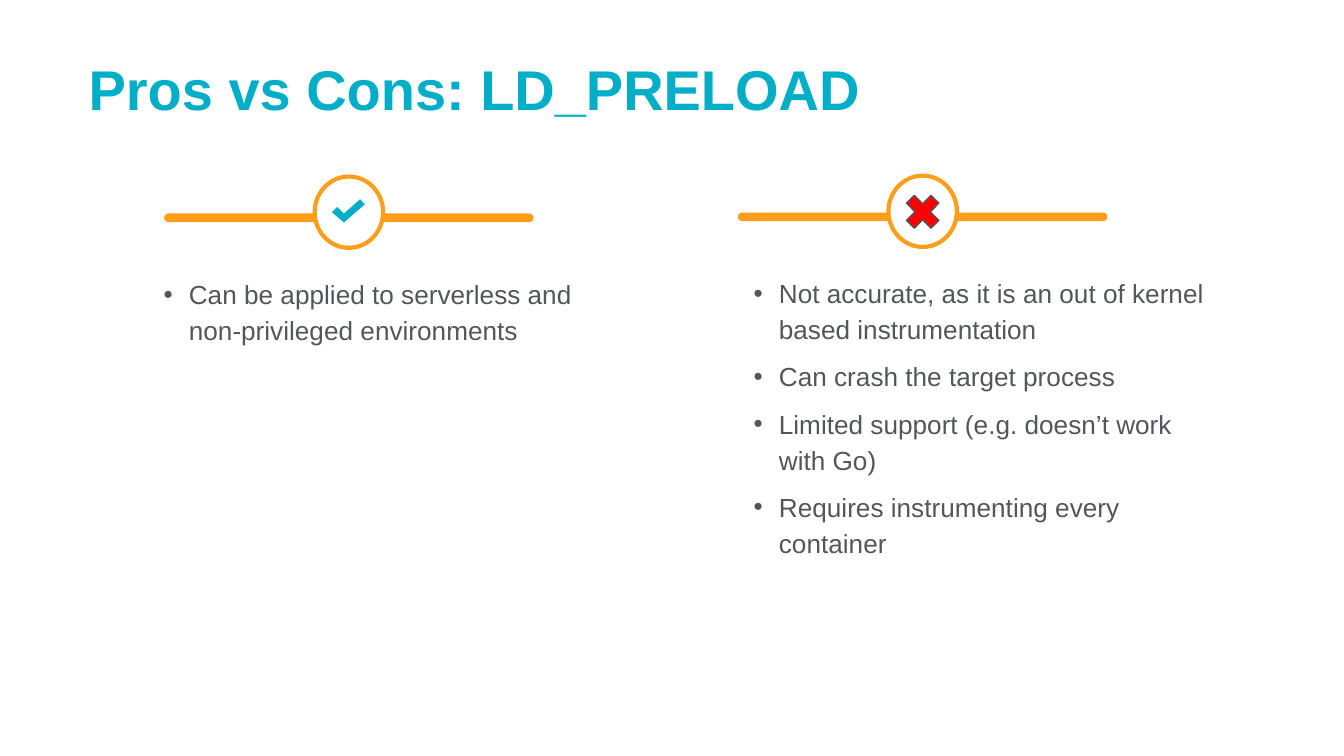
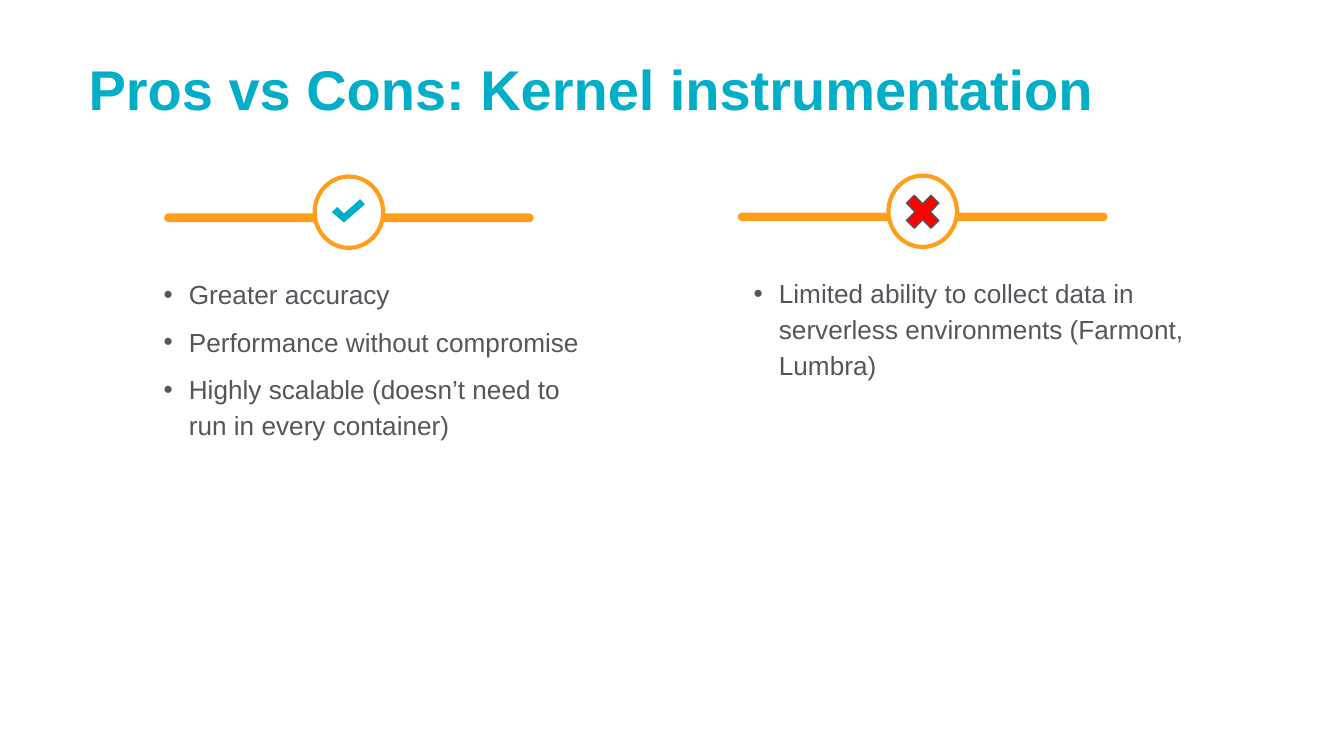
from dataclasses import dataclass

from lxml.etree import SubElement
from pptx import Presentation
from pptx.dml.color import RGBColor
from pptx.enum.shapes import MSO_SHAPE
from pptx.enum.text import MSO_ANCHOR, MSO_AUTO_SIZE, PP_ALIGN
from pptx.oxml.ns import qn
from pptx.util import Pt


@dataclass(frozen=True)
class Theme:
    font: str = "Arial"
    teal: str = "00AEC7"
    orange: str = "FF9E1B"
    grey: str = "53565A"
    red: str = "FF0000"
    white: str = "FFFFFF"
    title_size: float = 30
    body_size: float = 14


# Column geometry in points: centre x and y of the badge, then the text box
PROS = (186.9, 113.7, (80.6, 143.3, 243.4, 142.6))
CONS = (494.3, 113.2, (396.7, 142.6, 259.2, 144))
BAR_W, BAR_H, BAR_DROP = 198, 4.6, 3
BADGE_W, BADGE_H = 36.7, 38.2
CROSS_W, CROSS_H = 25.2, 25.9
# Check mark outline, relative to the badge centre
CHECK = [(6.1, -7), (-2.6, 0.7), (-6.2, -2.8), (-9.1, 0),
         (-2.6, 5.5), (8.6, -4.2)]


class Deck:
    def __init__(self, theme):
        self.theme = theme
        self.prs = Presentation()
        self.prs.slide_width, self.prs.slide_height = Pt(720), Pt(405)
        self.s = None

    def run(self, p, text, size, color, bold=False):
        r = p.add_run()
        r.text = text
        r.font.name = self.theme.font
        r.font.size = Pt(size)
        r.font.bold = bold
        r.font.color.rgb = RGBColor.from_string(color)

    def slide(self, title):
        """Start a title-only slide and format its title."""
        self.s = self.prs.slides.add_slide(self.prs.slide_layouts[5])
        sp = self.s.shapes.title
        sp.left, sp.top, sp.width, sp.height = Pt(40.3), Pt(9.4), Pt(656), Pt(80.6)
        tf = sp.text_frame
        tf.word_wrap = True
        tf.auto_size = MSO_AUTO_SIZE.NONE
        tf.vertical_anchor = MSO_ANCHOR.MIDDLE
        p = tf.paragraphs[0]
        p.alignment = PP_ALIGN.LEFT
        p.line_spacing = 0.9
        self.run(p, title, self.theme.title_size, self.theme.teal, bold=True)

    def paint(self, sp, fill, line=None, width=0):
        sp.shadow.inherit = False
        sp.fill.solid()
        sp.fill.fore_color.rgb = RGBColor.from_string(fill)
        if line:
            sp.line.color.rgb = RGBColor.from_string(line)
            sp.line.width = Pt(width)
        else:
            sp.line.fill.background()

    def shape(self, kind, cx, cy, w, h, fill, line=None, width=0, adj=None):
        """Add a preset shape centred on a point."""
        sp = self.s.shapes.add_shape(kind, Pt(cx - w / 2), Pt(cy - h / 2), Pt(w), Pt(h))
        if adj is not None:
            sp.adjustments[0] = adj
        self.paint(sp, fill, line, width)

    def badge(self, cx, cy):
        """Rounded bar with an outlined circle on it."""
        t = self.theme
        self.shape(MSO_SHAPE.ROUNDED_RECTANGLE, cx, cy + BAR_DROP, BAR_W, BAR_H,
                   t.orange, adj=0.5)
        self.shape(MSO_SHAPE.OVAL, cx, cy, BADGE_W, BADGE_H, t.white, t.orange, 2.25)

    def check(self, cx, cy):
        points = [(Pt(cx + x), Pt(cy + y)) for x, y in CHECK]
        builder = self.s.shapes.build_freeform(*points[0])
        builder.add_line_segments(points[1:], close=True)
        self.paint(builder.convert_to_shape(), self.theme.teal)

    def cross(self, cx, cy):
        self.shape(MSO_SHAPE.MATH_MULTIPLY, cx, cy + 0.3, CROSS_W, CROSS_H,
                   self.theme.red, self.theme.grey, 0.75, adj=0.235)

    def bullets(self, box, items):
        t = self.theme
        tf = self.s.shapes.add_textbox(*map(Pt, box)).text_frame
        tf.word_wrap = True
        for i, text in enumerate(items):
            p = tf.add_paragraph() if i else tf.paragraphs[0]
            pPr = p._p.get_or_add_pPr()
            pPr.set("marL", str(Pt(13.5)))
            pPr.set("indent", str(-Pt(13.5)))
            color = SubElement(pPr, qn("a:buClr"))
            SubElement(color, qn("a:srgbClr"), val=t.grey)
            SubElement(pPr, qn("a:buFont"), typeface=t.font)
            SubElement(pPr, qn("a:buChar"), char="•")
            p.line_spacing = 1.15
            p.space_before = Pt(6 if i else 0)
            self.run(p, text, t.body_size, t.grey)

    def column(self, place, mark, items):
        cx, cy, box = place
        self.badge(cx, cy)
        mark(cx, cy)
        self.bullets(box, items)

    def comparison(self, subject, pros, cons):
        self.slide(f"Pros vs Cons: {subject}")
        self.column(PROS, self.check, pros)
        self.column(CONS, self.cross, cons)


def main():
    deck = Deck(Theme())

    # Slide 1: preloading
    deck.comparison(
        "LD_PRELOAD",
        ["Can be applied to serverless and non-privileged environments"],
        ["Not accurate, as it is an out of kernel based instrumentation",
         "Can crash the target process",
         "Limited support (e.g. doesn’t work with Go)",
         "Requires instrumenting every container"])

    # Slide 2: kernel
    deck.comparison(
        "Kernel instrumentation",
        ["Greater accuracy",
         "Performance without compromise",
         "Highly scalable (doesn’t need to run in every container)"],
        ["Limited ability to collect data in serverless environments "
         "(Farmont, Lumbra)"])

    deck.prs.save("out.pptx")


if __name__ == "__main__":
    main()
